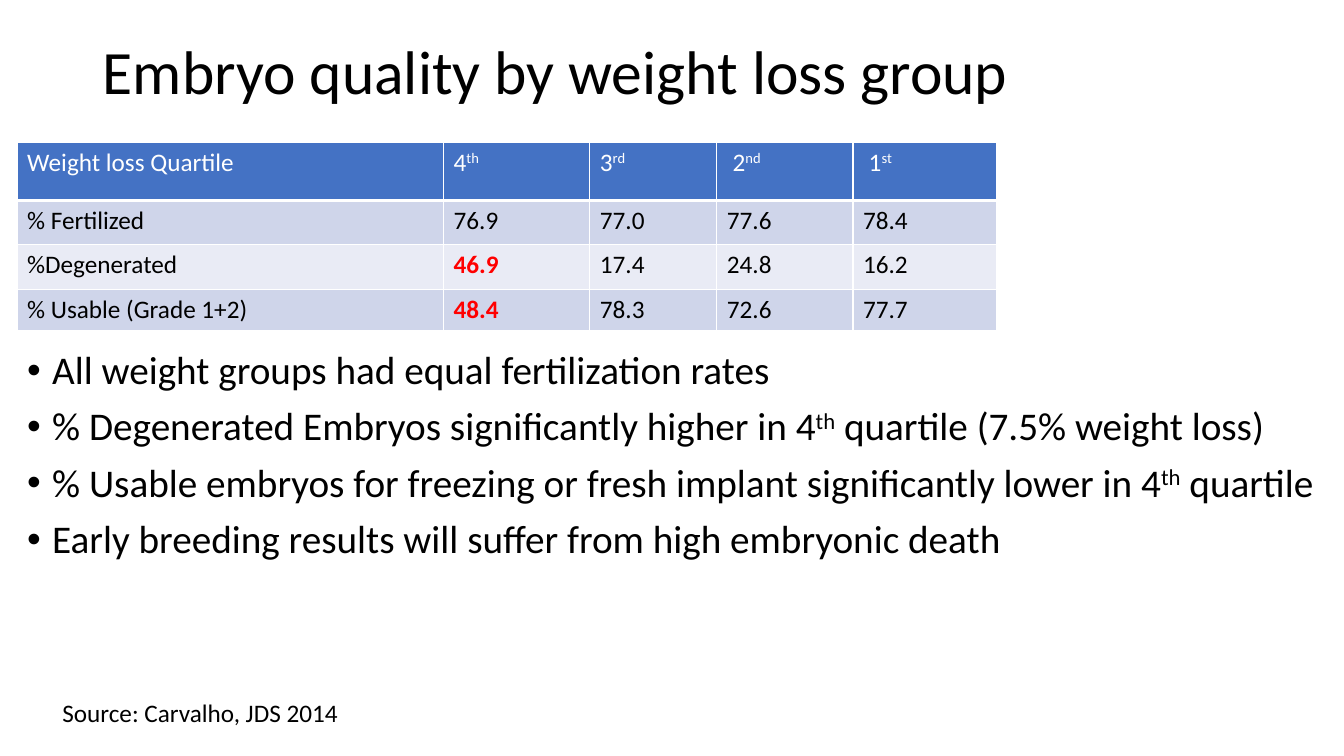
from dataclasses import dataclass

from lxml.etree import SubElement
from pptx import Presentation
from pptx.dml.color import RGBColor
from pptx.enum.text import MSO_ANCHOR, MSO_AUTO_SIZE, PP_ALIGN
from pptx.oxml.ns import qn
from pptx.slide import Slide
from pptx.table import _Cell
from pptx.text.text import TextFrame, _Paragraph
from pptx.util import Inches, Pt

FONT = "Calibri"
BLACK, WHITE, RED = "000000", "FFFFFF", "FF0000"
HEADER_FILL = "4472C4"
BAND_FILLS = ("CFD5EA", "E9EBF5")
SUPERSCRIPT_MARK = "^"

COLUMN_WIDTHS = (4.23, 1.45, 1.26, 1.35, 1.42)
ROW_HEIGHTS = (0.58, 0.44, 0.44, 0.4)
ROWS = (
    ("Weight loss Quartile", "4^th", "3^rd", " 2^nd", " 1^st"),
    ("% Fertilized", "76.9", "77.0", "77.6", "78.4"),
    ("%Degenerated", "46.9", "17.4", "24.8", "16.2"),
    ("% Usable (Grade 1+2)", "48.4", "78.3", "72.6", "77.7"),
)
SIGNIFICANT_VALUES = ("46.9", "48.4")
FINDINGS = (
    "All weight groups had equal fertilization rates",
    "% Degenerated Embryos significantly higher in 4^th^ quartile (7.5% weight loss)",
    "% Usable embryos for freezing or fresh implant significantly lower in 4^th^ quartile",
    "Early breeding results will suffer from high embryonic death",
)


@dataclass(frozen=True)
class Box:
    left: float
    top: float
    width: float
    height: float

    def lengths(self) -> tuple:
        return tuple(Inches(n) for n in (self.left, self.top, self.width, self.height))


@dataclass(frozen=True)
class TextStyle:
    size: float
    color: str = BLACK
    bold: bool = False


def rgb(color: str) -> RGBColor:
    return RGBColor.from_string(color)


def write(paragraph: _Paragraph, text: str, style: TextStyle) -> None:
    for index, part in enumerate(text.split(SUPERSCRIPT_MARK)):
        run = paragraph.add_run()
        run.text = part
        run.font.name = FONT
        run.font.size = Pt(style.size)
        run.font.bold = style.bold
        run.font.color.rgb = rgb(style.color)
        if index % 2:
            run._r.get_or_add_rPr().set("baseline", "30000")


def add_bullet(paragraph: _Paragraph) -> None:
    properties = paragraph._p.get_or_add_pPr()
    properties.set("marL", str(Inches(0.25)))
    properties.set("indent", str(Inches(-0.25)))
    SubElement(properties, qn("a:buFont"), typeface="Arial")
    SubElement(properties, qn("a:buChar"), char="•")


def add_borders(cell: _Cell, bottom_width: float) -> None:
    properties = cell._tc.get_or_add_tcPr()
    for side, width in (("L", 1), ("R", 1), ("T", 1), ("B", bottom_width)):
        line = SubElement(properties, qn(f"a:ln{side}"), w=str(Pt(width)))
        fill = SubElement(line, qn("a:solidFill"))
        SubElement(fill, qn("a:srgbClr"), val=WHITE)


def add_title(slide: Slide, text: str, box: Box) -> None:
    title = slide.shapes.title
    title.left, title.top, title.width, title.height = box.lengths()
    title.text_frame.vertical_anchor = MSO_ANCHOR.MIDDLE
    paragraph = title.text_frame.paragraphs[0]
    paragraph.alignment = PP_ALIGN.LEFT
    paragraph.line_spacing = 0.9
    write(paragraph, text, TextStyle(44))


def add_quality_table(slide: Slide, box: Box) -> None:
    table = slide.shapes.add_table(len(ROWS), len(COLUMN_WIDTHS), *box.lengths()).table
    for column, width in zip(table.columns, COLUMN_WIDTHS):
        column.width = Inches(width)
    for row_index, values in enumerate(ROWS):
        table.rows[row_index].height = Inches(ROW_HEIGHTS[row_index])
        is_header = row_index == 0
        for column_index, value in enumerate(values):
            cell = table.cell(row_index, column_index)
            add_borders(cell, 3 if is_header else 1)
            cell.fill.solid()
            cell.fill.fore_color.rgb = rgb(
                HEADER_FILL if is_header else BAND_FILLS[(row_index - 1) % 2]
            )
            significant = value in SIGNIFICANT_VALUES
            color = WHITE if is_header else RED if significant else BLACK
            write(cell.text_frame.paragraphs[0], value, TextStyle(18, color, significant))


def add_text_box(slide: Slide, box: Box) -> TextFrame:
    text_frame = slide.shapes.add_textbox(*box.lengths()).text_frame
    text_frame.word_wrap = True
    return text_frame


def add_findings(slide: Slide, box: Box) -> None:
    text_frame = add_text_box(slide, box)
    for index, finding in enumerate(FINDINGS):
        paragraph = text_frame.add_paragraph() if index else text_frame.paragraphs[0]
        paragraph.line_spacing = 0.9
        paragraph.space_before = Pt(10)
        add_bullet(paragraph)
        write(paragraph, finding, TextStyle(28))


def add_source(slide: Slide, text: str, box: Box) -> None:
    text_frame = add_text_box(slide, box)
    text_frame.auto_size = MSO_AUTO_SIZE.SHAPE_TO_FIT_TEXT
    write(text_frame.paragraphs[0], text, TextStyle(18))


def main() -> None:
    presentation = Presentation()
    presentation.slide_width = Inches(13.33)
    presentation.slide_height = Inches(7.5)
    slide = presentation.slides.add_slide(presentation.slide_layouts.get_by_name("Title Only"))
    add_title(slide, "Embryo quality by weight loss group", Box(0.92, 0.13, 11.5, 1.21))
    add_quality_table(slide, Box(0.17, 1.41, sum(COLUMN_WIDTHS), sum(ROW_HEIGHTS)))
    add_findings(slide, Box(0.17, 3.43, 13.17, 3.49))
    add_source(slide, "Source: Carvalho, JDS 2014", Box(0.52, 6.87, 5.99, 0.4))
    presentation.save("out.pptx")


if __name__ == "__main__":
    main()
